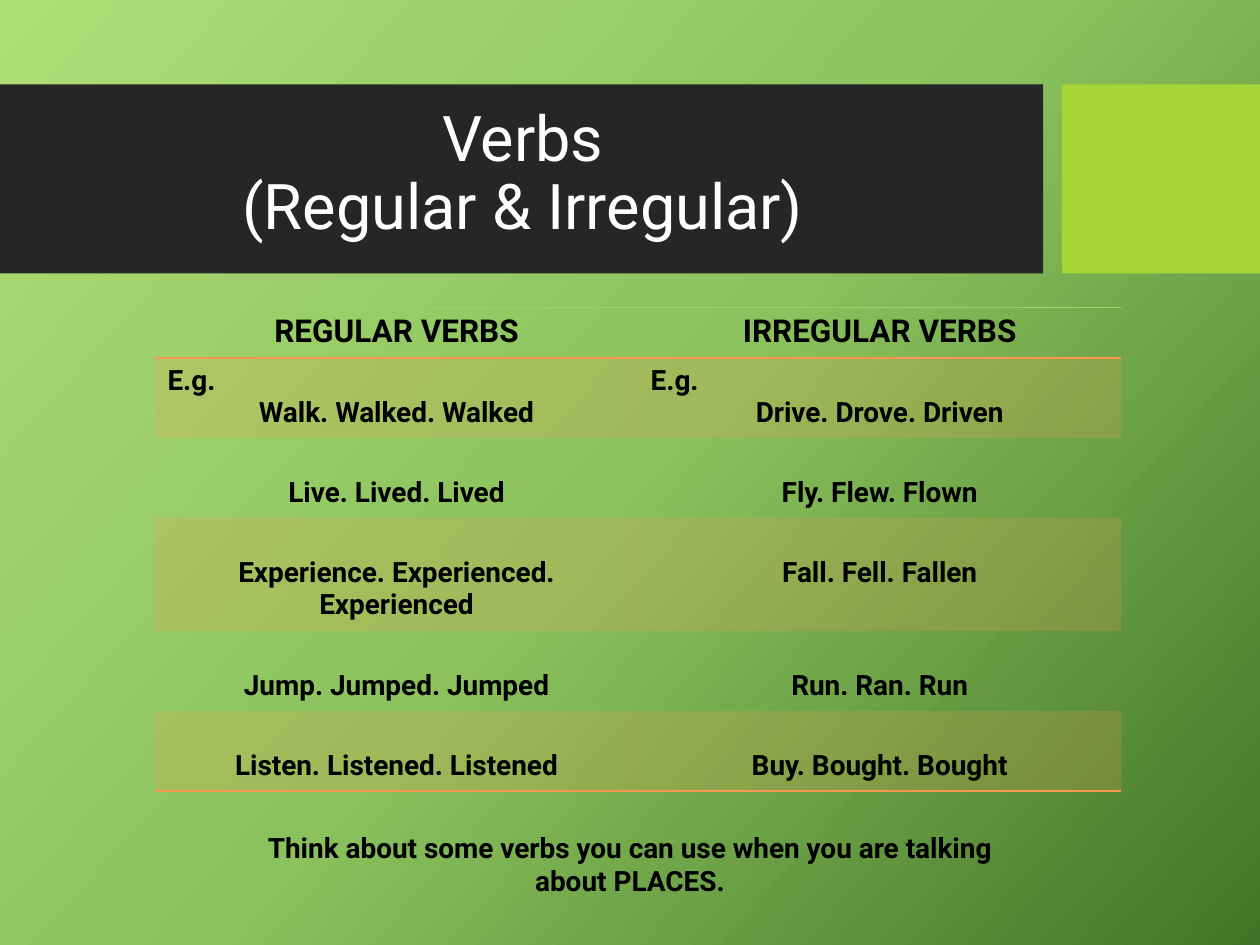
from copy import deepcopy
from dataclasses import dataclass

from lxml import etree
from pptx import Presentation
from pptx import util as u
from pptx.dml.color import RGBColor
from pptx.enum import shapes, text
from pptx.oxml.ns import qn

BLACK = RGBColor(0x00, 0x00, 0x00)
WHITE = RGBColor(0xFF, 0xFF, 0xFF)
CHARCOAL = RGBColor(0x26, 0x26, 0x26)
LIME = RGBColor(0xA7, 0xD5, 0x35)
ORANGE = RGBColor(0xFD, 0x98, 0x50)
PALE_GREEN = RGBColor(0x9F, 0xD0, 0x6A)
BACKDROP = ((0, RGBColor(0xAF, 0xDE, 0x77)),
            (0.5, RGBColor(0x8B, 0xC2, 0x5D)),
            (1, RGBColor(0x43, 0x75, 0x28)))
FONT = "Roboto"
COLS, ROWS = 100, 75  # slide grid
SLIDE_W, SLIDE_H = u.Inches(10), u.Inches(7.5)
LEFT, CENTER = text.PP_ALIGN.LEFT, text.PP_ALIGN.CENTER
NO_GRID_STYLE = "{2D5ABB26-0587-4C30-8999-92F81FD0307C}"


@dataclass(frozen=True)
class Area:
    col: float
    row: float
    cols: float
    rows: float

    def emu(self) -> tuple:
        return (across(self.col), down(self.row),
                across(self.cols), down(self.rows))


@dataclass(frozen=True)
class Band:
    area: Area
    color: RGBColor


@dataclass(frozen=True)
class VerbRow:
    regular: str
    irregular: str
    rows: float = 6.35


BANDS = (Band(Area(0, 6.7, 82.8, 15), CHARCOAL),
         Band(Area(84.3, 6.7, 15.7, 15), LIME))
VERBS = (
    VerbRow("REGULAR VERBS", "IRREGULAR VERBS", 4),
    VerbRow("E.g.\nWalk. Walked. Walked", "E.g.\nDrive. Drove. Driven"),
    VerbRow("Live. Lived. Lived", "Fly. Flew. Flown"),
    VerbRow("Experience. Experienced. Experienced", "Fall. Fell. Fallen", 9),
    VerbRow("Jump. Jumped. Jumped", "Run. Ran. Run"),
    VerbRow("Listen. Listened. Listened", "Buy. Bought. Bought"),
)


def across(cols: float) -> int:
    return int(SLIDE_W * cols / COLS)


def down(rows: float) -> int:
    return int(SLIDE_H * rows / ROWS)


def style(tf, size: float, color: RGBColor, bold: bool) -> None:
    for p in tf.paragraphs:
        p.alignment = LEFT if p.text == "E.g." else CENTER
        for r in p.runs:
            r.font.name, r.font.size, r.font.bold = FONT, u.Pt(size), bold
            r.font.color.rgb = color


def paint_background(s) -> None:
    fill = s.background.fill
    fill.gradient()
    fill.gradient_angle = 360 - 42
    stops = next(s._element.iter(qn("a:gsLst")))
    stops.append(deepcopy(stops[0]))
    for stop, (position, color) in zip(fill.gradient_stops, BACKDROP):
        stop.position, stop.color.rgb = position, color


def add_band(s, band: Band) -> None:
    sp = s.shapes.add_shape(shapes.MSO_SHAPE.RECTANGLE, *band.area.emu())
    sp.shadow.inherit = False
    sp.fill.solid()
    sp.fill.fore_color.rgb = band.color
    sp.line.fill.background()


def add_border(cell, side: str, color: RGBColor, width: float) -> None:
    """Draw one cell edge; call top before bottom, and after filling."""
    tc_pr = cell._tc.get_or_add_tcPr()
    ln = etree.Element(qn(f"a:ln{side}"), w=str(int(u.Pt(width))))
    fill = etree.SubElement(ln, qn("a:solidFill"))
    etree.SubElement(fill, qn("a:srgbClr"), val=str(color))
    tc_pr.insert(len(tc_pr.findall(qn("a:lnT"))), ln)


def shade(cell) -> None:
    cell.fill.solid()
    cell.fill.fore_color.rgb = ORANGE
    color = next(cell._tc.tcPr.iter(qn("a:srgbClr")))
    etree.SubElement(color, qn("a:alpha"), val="20000")


def add_verb_table(s, area: Area) -> None:
    table = s.shapes.add_table(len(VERBS), 2, *area.emu()).table
    table.horz_banding = False
    next(table._tbl.iter(qn("a:tableStyleId"))).text = NO_GRID_STYLE
    for column in table.columns:
        column.width = across(area.cols / 2)
    last = len(VERBS) - 1
    for i, verbs in enumerate(VERBS):
        table.rows[i].height = down(verbs.rows)
        for j, words in enumerate((verbs.regular, verbs.irregular)):
            cell = table.cell(i, j)
            cell.text_frame.text = words
            # Single verbs sit one line lower, level with the first example
            cell.margin_top = down(3.07 if i > 1 else 0.5)
            style(cell.text_frame, 16 if i else 18, BLACK, True)
            if i % 2:
                shade(cell)
            else:
                cell.fill.background()
            if i == 0:
                add_border(cell, "T", PALE_GREEN, 0.5)
            if i in (0, last):
                add_border(cell, "B", ORANGE, 1)


def main() -> None:
    prs = Presentation()
    prs.slide_width, prs.slide_height = SLIDE_W, SLIDE_H
    s = prs.slides.add_slide(prs.slide_layouts[5])
    paint_background(s)

    # Title over its bands
    for band in BANDS:
        add_band(s, band)
    title = s.shapes.title
    s.shapes._spTree.append(title._element)
    title.left, title.top, title.width, title.height = Area(0, 8, 83, 11.8).emu()
    tf = title.text_frame
    tf.text = "Verbs\v(Regular & Irregular)"
    tf.vertical_anchor = text.MSO_ANCHOR.MIDDLE
    tf.paragraphs[0].line_spacing = 0.9
    style(tf, 36, WHITE, False)

    # Closing prompt
    tf = s.shapes.add_textbox(*Area(2.5, 65.4, 95, 6.4).emu()).text_frame
    tf.word_wrap = True
    tf.auto_size = text.MSO_AUTO_SIZE.SHAPE_TO_FIT_TEXT
    tf.text = ("Think about some verbs you can use when you are talking\n"
               "about PLACES.")
    style(tf, 16, BLACK, True)

    add_verb_table(s, Area(12.3, 24.4, 76.7, 38.3))
    prs.save("out.pptx")


if __name__ == "__main__":
    main()
